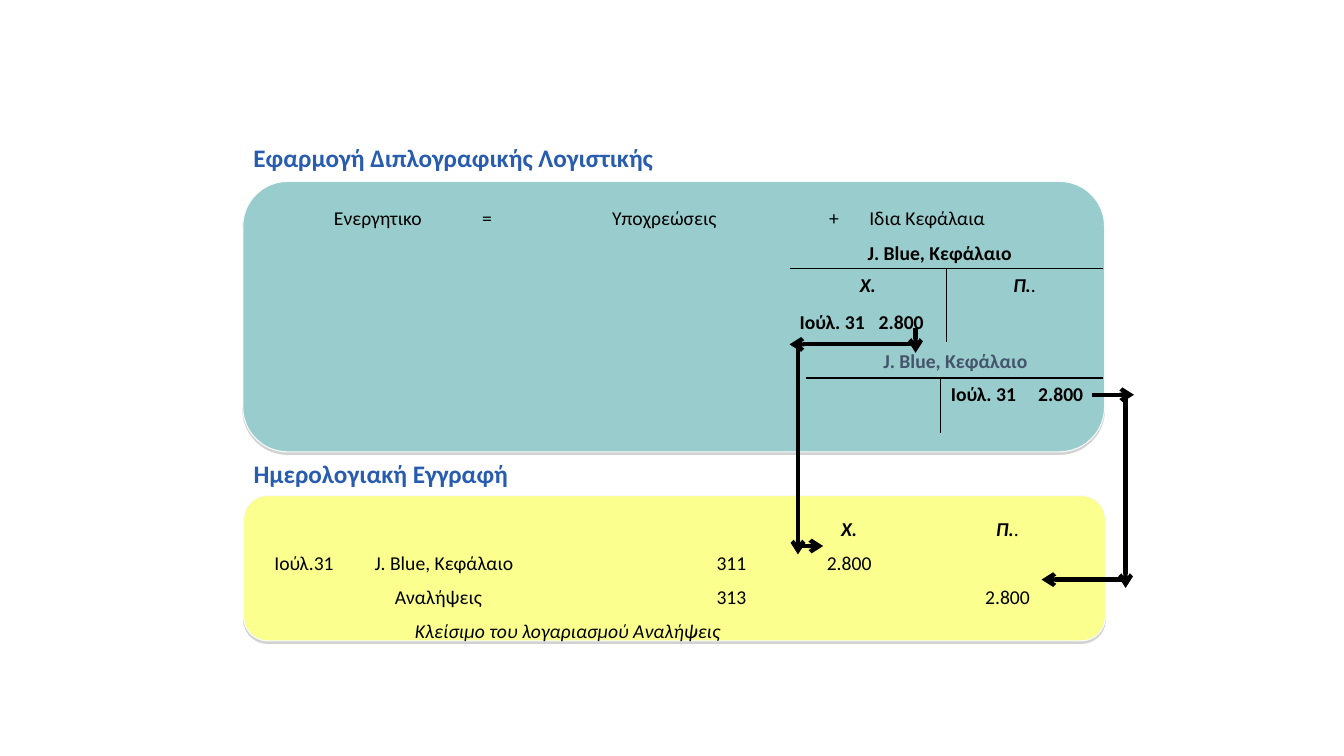
from dataclasses import dataclass, field

from lxml import etree
from pptx import Presentation
from pptx.dml.color import RGBColor
from pptx.enum import shapes, text
from pptx.oxml import ns
from pptx.util import Emu, Pt

BLACK = RGBColor(0x00, 0x00, 0x00)
TEAL = RGBColor(0x99, 0xCC, 0xCC)
YELLOW = RGBColor(0xFA, 0xFF, 0x8E)
EDGE = RGBColor(0xF8, 0xFB, 0xFC)
HEADING = RGBColor(0x27, 0x5C, 0xAE)
SLATE = RGBColor(0x44, 0x54, 0x6A)
SHADOW = RGBColor(0x80, 0x80, 0x80)

FONT = "Calibri"
BODY = 14
NO_GRID_STYLE = "{2D5ABB26-0587-4C30-8999-92F81FD0307C}"

# The slide is a grid of 160 columns by 90 rows of square cells.
COLUMNS, ROWS = 160, 90
UNIT = 76200
INSET = 1.2


def grid(cells: float) -> Emu:
    return Emu(round(cells * UNIT))


@dataclass(frozen=True)
class Span:
    words: str
    bold: bool = False
    italic: bool = False


@dataclass(frozen=True)
class Entry:
    spans: tuple[Span, ...] = ()
    centred: bool = False
    indent: float = 0
    tab: float = 0
    borders: str = ""
    across: int = 1


@dataclass(frozen=True)
class Ledger:
    left: float
    top: float
    widths: tuple[float, ...]
    heights: tuple[float, ...]
    entries: dict[tuple[int, int], Entry] = field(default_factory=dict)


@dataclass(frozen=True)
class Panel:
    left: float
    top: float
    width: float
    height: float
    colour: RGBColor


@dataclass(frozen=True)
class Caption:
    words: str
    left: float
    top: float
    width: float
    height: float
    size: int
    colour: RGBColor


@dataclass(frozen=True)
class Arrow:
    start: tuple[float, float]
    end: tuple[float, float]


def add_child(parent, tag: str, **attributes: str):
    return etree.SubElement(parent, ns.qn(tag), attributes)


def add_span(para, span: Span, size: int, colour: RGBColor) -> None:
    run = para.add_run()
    run.text = span.words
    run.font.name = FONT
    run.font.size = Pt(size)
    run.font.bold = span.bold
    run.font.italic = span.italic
    run.font.color.rgb = colour


def draw_panel(page, panel: Panel) -> None:
    box = page.shapes.add_shape(
        shapes.MSO_SHAPE.ROUNDED_RECTANGLE, grid(panel.left), grid(panel.top),
        grid(panel.width), grid(panel.height))
    box.fill.solid()
    box.fill.fore_color.rgb = panel.colour
    box.line.color.rgb = EDGE
    box.line.width = Pt(0.75)
    box.shadow.inherit = False
    effects = box._element.spPr.find(ns.qn("a:effectLst"))
    shade = add_child(effects, "a:outerShdw", blurRad="0", dist=str(Pt(1.8)), dir="5400000")
    tint = add_child(shade, "a:srgbClr", val=str(SHADOW))
    add_child(tint, "a:alpha", val="35000")


def fill_cell(cell, entry: Entry) -> None:
    cell.margin_left = grid(INSET + entry.indent)
    cell.fill.background()
    para = cell.text_frame.paragraphs[0]
    if entry.centred:
        para.alignment = text.PP_ALIGN.CENTER
    if entry.tab:
        stops = add_child(para._p.get_or_add_pPr(), "a:tabLst")
        add_child(stops, "a:tab", pos=str(grid(entry.tab)), algn="l")
    for span in entry.spans:
        add_span(para, span, BODY, BLACK)
    if not entry.spans:
        add_child(para._p, "a:endParaRPr", sz=str(BODY * 100))
    for place, side in enumerate(entry.borders):
        line = etree.Element(ns.qn(f"a:ln{side}"), w=str(Pt(1)))
        add_child(add_child(line, "a:solidFill"), "a:srgbClr", val=str(BLACK))
        cell._tc.tcPr.insert(place, line)


def draw_ledger(page, ledger: Ledger) -> None:
    table = page.shapes.add_table(
        len(ledger.heights), len(ledger.widths), grid(ledger.left), grid(ledger.top),
        grid(sum(ledger.widths)), grid(sum(ledger.heights))).table
    table.first_row = table.horz_banding = False
    table._tbl.tblPr.find(ns.qn("a:tableStyleId")).text = NO_GRID_STYLE
    for column, width in zip(table.columns, ledger.widths):
        column.width = grid(width)
    for r, height in enumerate(ledger.heights):
        table.rows[r].height = grid(height)
        for c in range(len(ledger.widths)):
            entry = ledger.entries.get((r, c), Entry())
            fill_cell(table.cell(r, c), entry)
            if entry.across > 1:
                table.cell(r, c).merge(table.cell(r, c + entry.across - 1))


def draw_caption(page, caption: Caption) -> None:
    box = page.shapes.add_textbox(
        grid(caption.left), grid(caption.top), grid(caption.width), grid(caption.height))
    box.text_frame.word_wrap = True
    add_span(box.text_frame.paragraphs[0], Span(caption.words, bold=True),
             caption.size, caption.colour)


def draw_arrow(page, arrow: Arrow) -> None:
    line = page.shapes.add_connector(
        shapes.MSO_CONNECTOR.STRAIGHT, *map(grid, arrow.start + arrow.end))
    line.line.color.rgb = BLACK
    line.line.width = Pt(3)
    add_child(line.line._get_or_add_ln(), "a:tailEnd", type="arrow")
    add_child(line._element.spPr, "a:effectLst")


DEBIT = (Span("Χ.", bold=True, italic=True),)
CREDIT = (Span("Π.", bold=True, italic=True), Span("."))
AMOUNT = (Span("2.800"),)
POSTING = (Span("Ιούλ. 31\t2.800", bold=True),)
OWNER = "J. Blue, Κεφάλαιο"

EQUATION = Ledger(29, 24, (26.2, 5.5, 36.8, 3.8, 25.8), (4,), {
    (0, 0): Entry((Span("Ενεργητικο"),), centred=True, indent=5.8),
    (0, 1): Entry((Span("="),), indent=1),
    (0, 2): Entry((Span("Υποχρεώσεις"),), centred=True),
    (0, 3): Entry((Span("+"),)),
    (0, 4): Entry((Span("Ιδια Κεφάλαια"),), indent=1),
})
ACCOUNT_NAME = Ledger(30, 28.2, (32.75,) * 3, (5.6,), {
    (0, 2): Entry((Span(OWNER, bold=True),), centred=True),
})
DEBIT_ACCOUNT = Ledger(94, 32, (18.65,) * 2, (4.37,) * 2, {
    (0, 0): Entry(DEBIT, centred=True, borders="RT"),
    (0, 1): Entry(CREDIT, centred=True, borders="LT"),
    (1, 0): Entry(POSTING, tab=9.4, borders="R"),
    (1, 1): Entry(borders="L"),
})
JOURNAL = Ledger(29, 61, (14.4, 47.8, 6.6, 13.2, 17.9), (4,) * 5, {
    (0, 2): Entry(DEBIT, centred=True, across=2),
    (0, 4): Entry(CREDIT, centred=True),
    (1, 0): Entry((Span("Ιούλ.31"),), centred=True),
    (1, 1): Entry((Span(OWNER + "\t311"),), tab=40.7),
    (1, 2): Entry(AMOUNT, centred=True, across=2),
    (2, 1): Entry((Span("Αναλήψεις\t313"),), indent=2.4, tab=38.3),
    (2, 2): Entry(across=2),
    (2, 4): Entry(AMOUNT, centred=True),
    (3, 1): Entry((Span("Κλείσιμο του λογαριασμού Αναλήψεις", italic=True),),
                  indent=4.8, across=3),
    (4, 1): Entry(across=2),
})
CREDIT_ACCOUNT = Ledger(96, 45, (16, 19.3), (6.6,), {
    (0, 0): Entry(borders="RT"),
    (0, 1): Entry(POSTING, tab=10.4, borders="LT"),
})
CAPTIONS = (
    Caption("Εφαρμογή Διπλογραφικής Λογιστικής", 29, 16.3, 53, 4.8, 18, HEADING),
    Caption("Ημερολογιακή Εγγραφή", 29, 54, 41.9, 4.8, 18, HEADING),
    Caption(OWNER, 104, 41, 23, 4.1, BODY, SLATE),
)
# Each arrowhead reaches one grid cell past the corner where the next arrow starts.
ARROWS = (
    Arrow((109, 39), (109, 42)),
    Arrow((109, 41), (94, 41)),
    Arrow((95, 41), (95, 66)),
    Arrow((95, 65), (98, 65)),
    Arrow((130, 47), (135, 47)),
    Arrow((134, 47), (134, 70)),
    Arrow((134, 69), (124, 69)),
)


def main() -> None:
    deck = Presentation()
    deck.slide_width, deck.slide_height = grid(COLUMNS), grid(ROWS)
    page = deck.slides.add_slide(deck.slide_layouts[6])

    # Accounting equation and the debit account
    draw_panel(page, Panel(28.9, 21.6, 102.6, 32.2, TEAL))
    for ledger in (EQUATION, ACCOUNT_NAME, DEBIT_ACCOUNT):
        draw_ledger(page, ledger)

    # Journal entry
    draw_panel(page, Panel(29, 59, 102.6, 17.3, YELLOW))
    draw_ledger(page, JOURNAL)

    # Headings, credit account and posting arrows
    for caption in CAPTIONS:
        draw_caption(page, caption)
    draw_ledger(page, CREDIT_ACCOUNT)
    for arrow in ARROWS:
        draw_arrow(page, arrow)

    deck.save("out.pptx")


if __name__ == "__main__":
    main()
